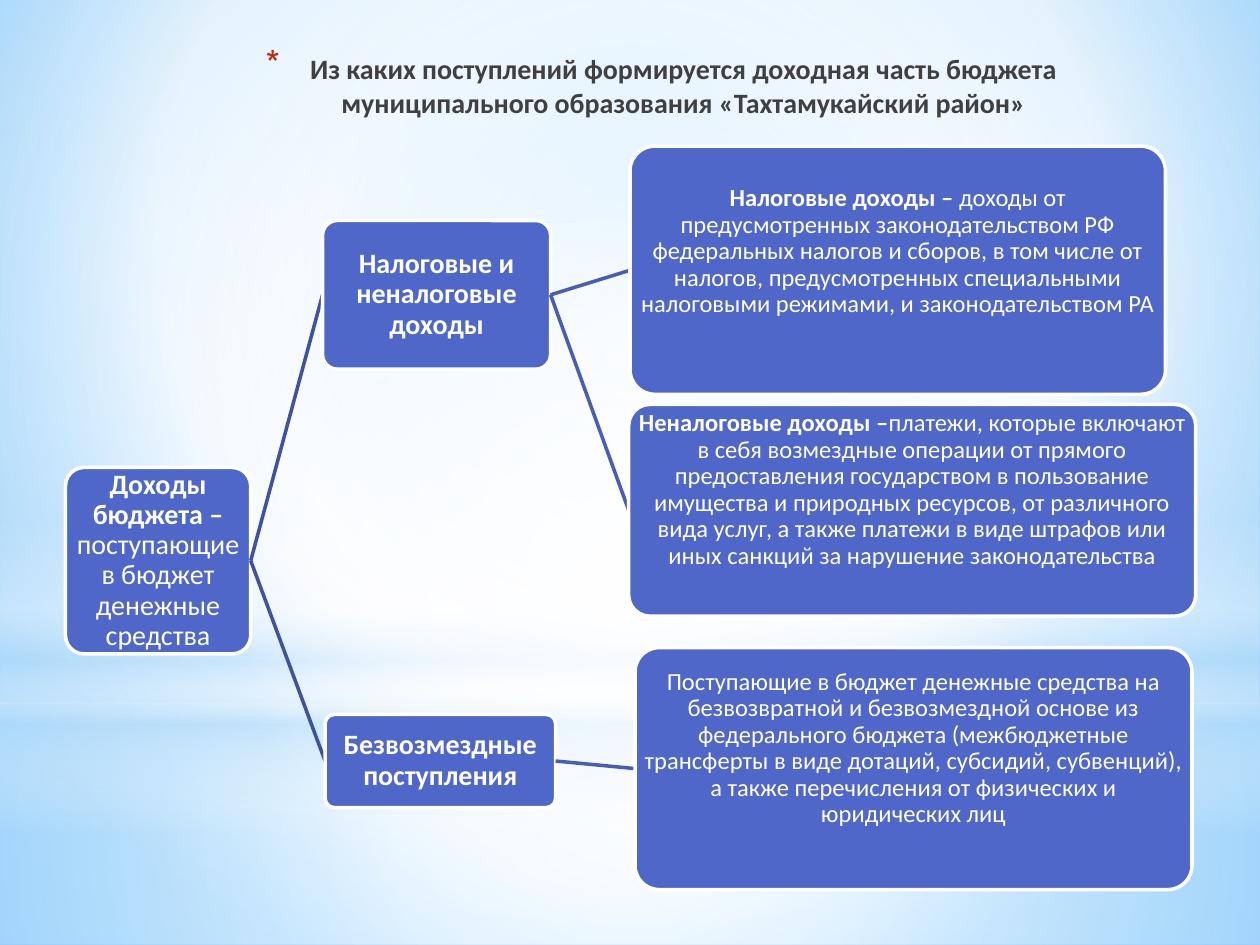
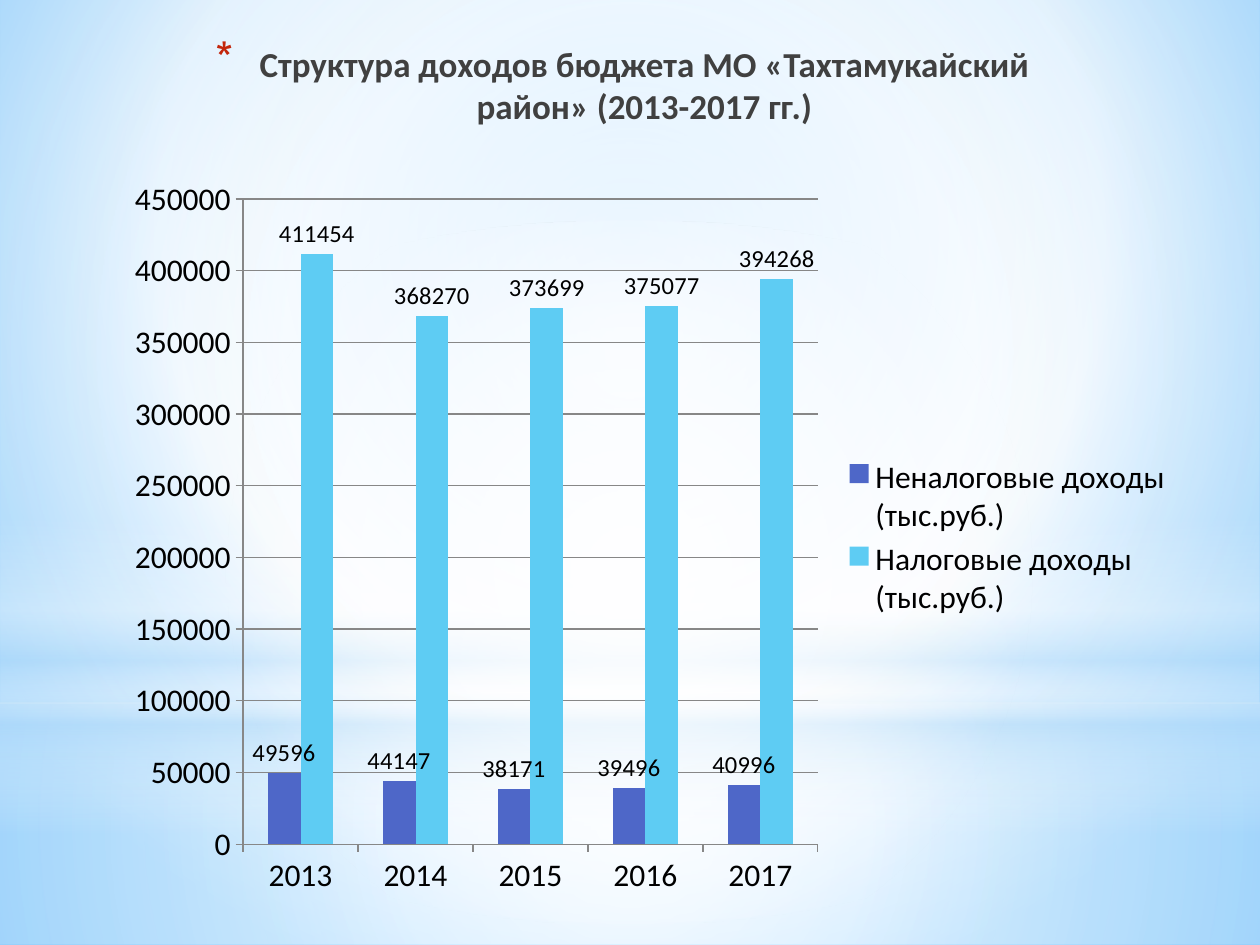
from dataclasses import dataclass

from lxml.etree import SubElement
from pptx import Presentation
from pptx.chart.data import CategoryChartData
from pptx.dml.color import RGBColor
from pptx.enum.chart import XL_CHART_TYPE as ChartType
from pptx.enum.chart import XL_LABEL_POSITION as LabelPosition
from pptx.enum.chart import XL_LEGEND_POSITION as LegendPosition
from pptx.enum.chart import XL_TICK_MARK as TickMark
from pptx.enum.shapes import MSO_CONNECTOR as Connector
from pptx.enum.shapes import MSO_SHAPE as Shape
from pptx.enum.text import MSO_ANCHOR as Anchor
from pptx.enum.text import PP_ALIGN as Align
from pptx.oxml.ns import qn
from pptx.util import Inches, Pt


@dataclass(frozen=True)
class Theme:
    font: str = "Calibri"
    white: str = "FFFFFF"
    black: str = "000000"
    title: str = "404040"
    bullet: str = "C3260C"
    box: str = "4E67C8"
    trunk: str = "3E52A0"
    branch: str = "475DB6"
    tax: str = "5ECCF3"
    grid: str = "878787"
    haze: str = "B4DCFA"
    sky_light: str = "9ED5FF"
    sky_deep: str = "5BB9FF"
    head_size: int = 16
    detail_size: int = 14
    axis_size: int = 18
    line: int = 2
    inset: float = 0.01


THEME = Theme()
CENTRE = (50, 50, 50, 50)

SKY = [(0, THEME.sky_light, 100), (60, THEME.white, 100), (100, THEME.sky_deep, 100)]
SKY_FOCUS = (20, 10, 20, 60)

BACKDROP = [
    (Shape.RECTANGLE, (0, 5.58, 10, 1.92), CENTRE,
     [(0, THEME.white, 91), (37, THEME.white, 76), (100, THEME.haze, 79)]),
    (Shape.RECTANGLE, (0, 0, 10, 5.58), CENTRE,
     [(0, THEME.white, 89), (48, THEME.white, 62), (100, THEME.haze, 79)]),
    (Shape.RECTANGLE, (0, 4.12, 10, 2.5), None,
     [(0, THEME.white, 0), (29, THEME.white, 30), (45, THEME.haze, 40),
      (55, THEME.white, 26), (65, THEME.haze, 60), (100, THEME.white, 0)]),
    (Shape.OVAL, (0, 1.75, 10, 5.58), CENTRE,
     [(0, THEME.white, 100), (56, THEME.white, 0)]),
]

INCOME_TITLE = ("Из каких поступлений формируется доходная часть бюджета "
                "муниципального образования «Тахтамукайский район»")
STRUCTURE_TITLE = "Структура доходов бюджета МО «Тахтамукайский район» (2013-2017 гг.)"

INCOME_BOXES = {
    "income": dict(
        area=(0.52, 3.71, 1.47, 1.48), size=THEME.head_size, lift=0,
        bold="Доходы бюджета – ", plain="поступающие в бюджет денежные средства"),
    "own": dict(
        area=(2.56, 1.75, 1.81, 1.18), size=THEME.head_size, lift=0,
        bold="Налоговые и неналоговые доходы", plain=""),
    "tax": dict(
        area=(5, 1.16, 4.25, 1.97), size=THEME.detail_size, lift=0.29,
        bold="Налоговые доходы – ",
        plain="доходы от предусмотренных законодательством РФ федеральных налогов "
              "и сборов, в том числе от налогов, предусмотренных специальными "
              "налоговыми режимами, и законодательством РА"),
    "non_tax": dict(
        area=(4.99, 3.21, 4.5, 1.68), size=THEME.detail_size, lift=0.32,
        bold="Неналоговые доходы –",
        plain="платежи, которые включают в себя возмездные операции от прямого "
              "предоставления государством в пользование имущества и природных "
              "ресурсов, от различного вида услуг, а также платежи в виде штрафов "
              "или иных санкций за нарушение законодательства"),
    "grants": dict(
        area=(2.58, 5.67, 1.83, 0.74), size=THEME.head_size, lift=0,
        bold="Безвозмездные поступления", plain=""),
    "grant_detail": dict(
        area=(5.04, 5.14, 4.42, 1.92), size=THEME.detail_size, lift=0.32, bold="",
        plain="Поступающие в бюджет денежные средства на безвозвратной и "
              "безвозмездной основе из федерального бюджета (межбюджетные трансферты "
              "в виде дотаций, субсидий, субвенций), а также перечисления от "
              "физических и юридических лиц"),
}
INCOME_LINKS = [
    ("income", "own", THEME.trunk),
    ("own", "tax", THEME.branch),
    ("own", "non_tax", THEME.branch),
    ("income", "grants", THEME.trunk),
    ("grants", "grant_detail", THEME.branch),
]

YEARS = ["2013", "2014", "2015", "2016", "2017"]
INCOME_SERIES = [
    ("Неналоговые доходы (тыс.руб.)", THEME.box, [49596, 44147, 38171, 39496, 40996]),
    ("Налоговые доходы (тыс.руб.)", THEME.tax, [411454, 368270, 373699, 375077, 394268]),
]
CHART_AREA = (0.9, 1.31, 8.51, 5.91)


def rgb(value):
    return RGBColor.from_string(value)


def inches(area):
    return [Inches(value) for value in area]


def add_node(parent, tag, **attributes):
    return SubElement(parent, qn(tag), {key: str(value) for key, value in attributes.items()})


def fill_gradient(fill, owner, stops, focus):
    fill.gradient()
    gradient = owner.find(".//" + qn("a:gradFill"))
    for child in list(gradient):
        gradient.remove(child)
    stop_list = add_node(gradient, "a:gsLst")
    for position, color, opacity in stops:
        stop = add_node(stop_list, "a:gs", pos=position * 1000)
        tint = add_node(stop, "a:srgbClr", val=color)
        add_node(tint, "a:alpha", val=opacity * 1000)
    if focus:
        circle = add_node(gradient, "a:path")
        circle.set("path", "circle")
        sides = {side: value * 1000 for side, value in zip("ltrb", focus)}
        add_node(circle, "a:fillToRect", **sides)
    else:
        add_node(gradient, "a:lin", ang=90 * 60000, scaled=0)


def add_span(para, text, size, color, bold):
    span = para.add_run()
    span.text = text
    span.font.name = THEME.font
    span.font.size = Pt(size)
    span.font.bold = bold
    span.font.color.rgb = rgb(color)


def add_title(page, text, left, top, size):
    frame = page.shapes.add_textbox(*inches((left, top, 7.12, 1.25))).text_frame
    frame.word_wrap = True
    para = frame.paragraphs[0]
    para.alignment = Align.CENTER
    add_span(para, text, size, THEME.title, True)
    settings = para._p.get_or_add_pPr()
    settings.set("marL", str(Inches(0.35)))
    settings.set("indent", str(Inches(-0.35)))
    add_node(add_node(settings, "a:buClr"), "a:srgbClr", val=THEME.bullet)
    add_node(settings, "a:buSzPct", val=128000)
    add_node(settings, "a:buChar", char="*")


def add_page(deck, title, left, top, size):
    page = deck.slides.add_slide(deck.slide_layouts[6])
    fill_gradient(page.background.fill, page.element, SKY, SKY_FOCUS)
    for kind, area, focus, stops in BACKDROP:
        layer = page.shapes.add_shape(kind, *inches(area))
        layer.shadow.inherit = False
        layer.line.fill.background()
        fill_gradient(layer.fill, layer.element, stops, focus)
    add_title(page, title, left, top, size)
    return page


def add_box(page, area, size, lift, bold, plain):
    box = page.shapes.add_shape(Shape.ROUNDED_RECTANGLE, *inches(area))
    box.adjustments[0] = 0.1
    box.shadow.inherit = False
    box.fill.solid()
    box.fill.fore_color.rgb = rgb(THEME.box)
    box.line.color.rgb = rgb(THEME.white)
    box.line.width = Pt(THEME.line)
    frame = box.text_frame
    frame.word_wrap = True
    frame.vertical_anchor = Anchor.MIDDLE
    frame.margin_left = frame.margin_right = frame.margin_top = Inches(THEME.inset)
    frame.margin_bottom = Inches(THEME.inset + lift)
    para = frame.paragraphs[0]
    para.alignment = Align.CENTER
    para.line_spacing = 0.9
    for text, weight in ((bold, True), (plain, False)):
        if text:
            add_span(para, text, size, THEME.white, weight)
    return box


def link_boxes(page, source, target, color):
    link = page.shapes.add_connector(Connector.STRAIGHT, 0, 0, 0, 0)
    link.begin_connect(source, 3)
    link.end_connect(target, 1)
    link.line.color.rgb = rgb(color)
    link.line.width = Pt(THEME.line)
    add_node(link.element.spPr, "a:effectLst")
    target.element.addprevious(link.element)


def style_axis(axis):
    axis.major_tick_mark = TickMark.OUTSIDE
    axis.minor_tick_mark = TickMark.NONE
    axis.format.line.color.rgb = rgb(THEME.grid)
    axis.tick_labels.font.size = Pt(THEME.axis_size)


def add_income_chart(page):
    data = CategoryChartData()
    data.categories = YEARS
    for name, _, values in INCOME_SERIES:
        data.add_series(name, values)
    chart = page.shapes.add_chart(ChartType.COLUMN_CLUSTERED, *inches(CHART_AREA), data).chart
    chart.has_title = False
    chart.font.name = THEME.font
    chart.font.size = Pt(THEME.axis_size)
    chart.font.color.rgb = rgb(THEME.black)
    chart.has_legend = True
    chart.legend.position = LegendPosition.RIGHT
    chart.legend.include_in_layout = False
    for axis in (chart.category_axis, chart.value_axis):
        style_axis(axis)
    scale = chart.value_axis
    scale.minimum_scale, scale.maximum_scale, scale.major_unit = 0, 450000, 50000
    scale.has_major_gridlines = True
    scale.major_gridlines.format.line.color.rgb = rgb(THEME.grid)
    plot = chart.plots[0]
    plot.gap_width = 150
    plot.overlap = 0
    plot.vary_by_categories = False
    for series, (_, color, _) in zip(plot.series, INCOME_SERIES):
        series.format.fill.solid()
        series.format.fill.fore_color.rgb = rgb(color)
        labels = series.data_labels
        labels.show_value = True
        labels.position = LabelPosition.OUTSIDE_END
        labels.font.size = Pt(THEME.detail_size)


def main():
    deck = Presentation()
    deck.slide_width, deck.slide_height = Inches(10), Inches(7.5)

    income_page = add_page(deck, INCOME_TITLE, 1.69, 0.36, 16)
    boxes = {name: add_box(income_page, **content) for name, content in INCOME_BOXES.items()}
    for source, target, color in INCOME_LINKS:
        link_boxes(income_page, boxes[source], boxes[target], color)

    structure_page = add_page(deck, STRUCTURE_TITLE, 1.38, 0.29, 20)
    add_income_chart(structure_page)

    deck.save("out.pptx")


if __name__ == "__main__":
    main()
